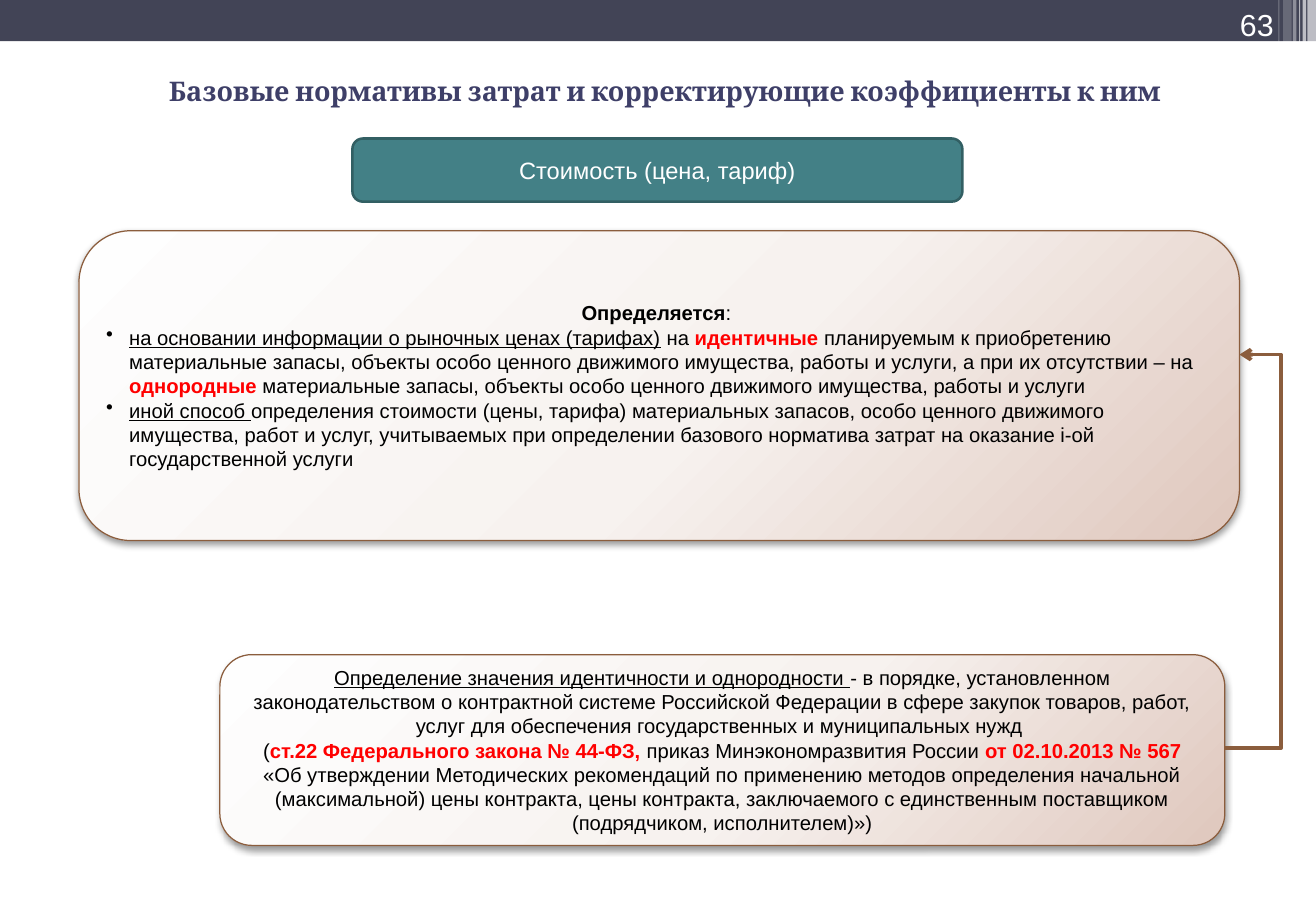
"""Builds the slide on base cost norms and their correction factors."""
import pptx
import pptx.dml.color
import pptx.enum.shapes
import pptx.enum.text
import pptx.oxml
import pptx.oxml.ns
import pptx.util

PX = 9144
W, H = 1083, 750
COLORS = {
    "bar": "424456", "white": "FFFFFF", "title": "3E3F68", "teal": "438086",
    "teal_line": "325F63", "brown": "8B5D3D", "black": "000000", "red": "FF0000",
    "light": "FEFEFE", "cream": "F7F2EF", "rose": "DFC7BD",
}
NS = pptx.oxml.ns.nsdecls("a")
SHAPE = pptx.enum.shapes.MSO_SHAPE
ALIGN = pptx.enum.text.PP_ALIGN
ANCHOR = pptx.enum.text.MSO_ANCHOR
BODY = {"name": "Arial", "size": 12, "color": "black"}
KEY = {"bold": True, "color": "red"}
UNDER = {"underline": True}
STRIPES = [(1076, 7, 68, 65), (1072, 3, 68, 65), (1069, 1, 68, 60),
           (1064, 3, 68, 40), (1056, 7, 64, 20), (1052, 1, 64, 30)]
MAIN_BOX = (65, 190, 955, 255)
NOTE_BOX = (181, 539, 827, 157)
MAIN_TEXT = [
    [("Определяется", {"bold": True}), (": ", {})],
    [("на основании информации о рыночных ценах (тарифах)", UNDER), (" на ", {}),
     ("идентичные", KEY),
     (" планируемым к приобретению материальные запасы, объекты особо ценного движимого "
      "имущества, работы и услуги, а при их отсутствии – на ", {}),
     ("однородные", KEY),
     (" материальные запасы, объекты особо ценного движимого имущества, работы и услуги", {})],
    [("иной способ ", UNDER),
     ("определения стоимости (цены, тарифа) материальных запасов, особо ценного движимого "
      "имущества, работ и услуг, учитываемых при определении базового норматива затрат "
      "на оказание i-ой государственной услуги", {})],
]
NOTE_TEXT = [
    [("Определение значения идентичности и однородности ", UNDER),
     ("- в порядке, установленном законодательством о контрактной системе Российской "
      "Федерации в сфере закупок товаров, работ, услуг для обеспечения государственных "
      "и муниципальных нужд ", {})],
    [("(", {}), ("ст.22 Федерального закона № 44-ФЗ, ", KEY),
     ("приказ Минэкономразвития России ", {}), ("от 02.10.2013 № 567 ", KEY),
     ("«Об утверждении Методических рекомендаций по применению методов определения "
      "начальной (максимальной) цены контракта, цены контракта, заключаемого с "
      "единственным поставщиком (подрядчиком, исполнителем)»)", {})],
]


def rgb(name):
    """Return the named colour."""
    return pptx.dml.color.RGBColor.from_string(COLORS[name])


def emu(box):
    """Turn px lengths into EMU."""
    return [pptx.util.Emu(v * PX) for v in box]


def write(sp, paragraphs, base, align=ALIGN.CENTER, anchor=ANCHOR.MIDDLE, bullets=False):
    """Write paragraphs of styled runs, with bullets after the first if asked."""
    tf = sp.text_frame
    tf.word_wrap = True
    tf.vertical_anchor = anchor
    for i, runs in enumerate(paragraphs):
        p = tf.paragraphs[0] if i == 0 else tf.add_paragraph()
        p.alignment = align
        if bullets and i:
            p.alignment = ALIGN.LEFT
            pPr = p._p.get_or_add_pPr()
            pPr.set("marL", str(19 * PX))
            pPr.set("indent", str(-19 * PX))
            pPr.append(pptx.oxml.parse_xml(f'<a:buChar {NS} char="•"/>'))
        for text, style in runs:
            r = p.add_run()
            r.text = text
            fmt = {**base, **style}
            r.font.color.rgb = rgb(fmt.pop("color"))
            fmt["size"] = pptx.util.Pt(fmt["size"])
            for name, value in fmt.items():
                setattr(r.font, name, value)


def add_block(slide, kind, box, fill, line=None, width=0):
    """Add a filled shape without shadow."""
    sp = slide.shapes.add_shape(kind, *emu(box))
    sp.shadow.inherit = False
    sp.fill.solid()
    sp.fill.fore_color.rgb = rgb(fill)
    if line:
        sp.line.color.rgb = rgb(line)
        sp.line.width = pptx.util.Pt(width)
    else:
        sp.line.fill.background()
    return sp


def add_label(slide, box, text, base, **layout):
    """Add a one-line text box."""
    write(slide.shapes.add_textbox(*emu(box)), [[(text, {})]], base, **layout)


def add_header(slide, box):
    """Add the top bar with its translucent stripes and the page number."""
    x, y, w, h = box
    add_block(slide, SHAPE.RECTANGLE, box, "bar")
    for left, width, height, alpha in STRIPES:
        sp = add_block(slide, SHAPE.RECTANGLE, (x + left, y, width, height), "white")
        clr = sp._element.spPr.find(".//" + pptx.oxml.ns.qn("a:srgbClr"))
        clr.append(pptx.oxml.parse_xml(f'<a:alpha {NS} val="{alpha * 1000}"/>'))
    add_label(slide, (x + w - 115, y, 90, 40), "63",
              {"name": "Arial", "size": 18, "color": "white"},
              align=ALIGN.RIGHT, anchor=ANCHOR.BOTTOM)


def add_card(slide, box, paragraphs, bullets=False):
    """Add a rounded card with a gradient, a soft shadow and text."""
    sp = add_block(slide, SHAPE.ROUNDED_RECTANGLE, box, "light", "brown", 0.75)
    spPr = sp._element.spPr
    stops = "".join(f'<a:gs pos="{pos * 1000}"><a:srgbClr val="{COLORS[c]}"/></a:gs>'
                    for pos, c in [(0, "light"), (55, "cream"), (100, "rose")])
    grad = pptx.oxml.parse_xml(
        f'<a:gradFill {NS} rotWithShape="1"><a:gsLst>{stops}</a:gsLst><a:path path="circle">'
        '<a:fillToRect l="-40000" t="-90000" r="140000" b="190000"/></a:path></a:gradFill>')
    spPr.replace(spPr.find(pptx.oxml.ns.qn("a:solidFill")), grad)
    spPr.find(pptx.oxml.ns.qn("a:effectLst")).append(pptx.oxml.parse_xml(
        f'<a:outerShdw {NS} blurRad="{pptx.util.Pt(4.1)}" dist="{pptx.util.Pt(2)}" '
        f'dir="5400000" rotWithShape="0"><a:srgbClr val="{COLORS["black"]}">'
        '<a:alpha val="40000"/></a:srgbClr></a:outerShdw>'))
    write(sp, paragraphs, BODY, bullets=bullets)


def add_link(slide, start, end, bend):
    """Add an elbow arrow that turns at the given x."""
    cn = slide.shapes.add_connector(
        pptx.enum.shapes.MSO_CONNECTOR.ELBOW, *emu(start + end))
    cn.line.color.rgb = rgb("brown")
    cn.line.width = pptx.util.Pt(2.25)
    spPr = cn._element.spPr
    adj = round((bend - start[0]) / (end[0] - start[0]) * 100000)
    spPr.find(".//" + pptx.oxml.ns.qn("a:avLst")).append(
        pptx.oxml.parse_xml(f'<a:gd {NS} name="adj1" fmla="val {adj}"/>'))
    cn.line._get_or_add_ln().append(pptx.oxml.parse_xml(f'<a:tailEnd {NS} type="arrow"/>'))
    spPr.append(pptx.oxml.parse_xml(f'<a:effectLst {NS}/>'))


def main():
    """Build and save the slide."""
    prs = pptx.Presentation()
    prs.slide_width, prs.slide_height = emu((W, H))
    slide = prs.slides.add_slide(prs.slide_layouts[6])
    add_header(slide, (0, 0, W, 34))
    add_card(slide, NOTE_BOX, NOTE_TEXT)
    add_label(slide, (51, 16, 993, 117),
              "Базовые нормативы затрат и корректирующие коэффициенты к ним",
              {"name": "Cambria", "size": 16, "color": "title", "bold": True})
    sp = add_block(slide, SHAPE.ROUNDED_RECTANGLE, (290, 114, 502, 52),
                   "teal", "teal_line", 1.5)
    write(sp, [[("Стоимость (цена, тариф)", {})]],
          {"name": "Arial", "size": 14, "color": "white"})
    add_card(slide, MAIN_BOX, MAIN_TEXT, bullets=True)
    add_link(slide, (NOTE_BOX[0] + NOTE_BOX[2], 616), (MAIN_BOX[0] + MAIN_BOX[2], 292), 1054)
    prs.save("out.pptx")


if __name__ == "__main__":
    main()
